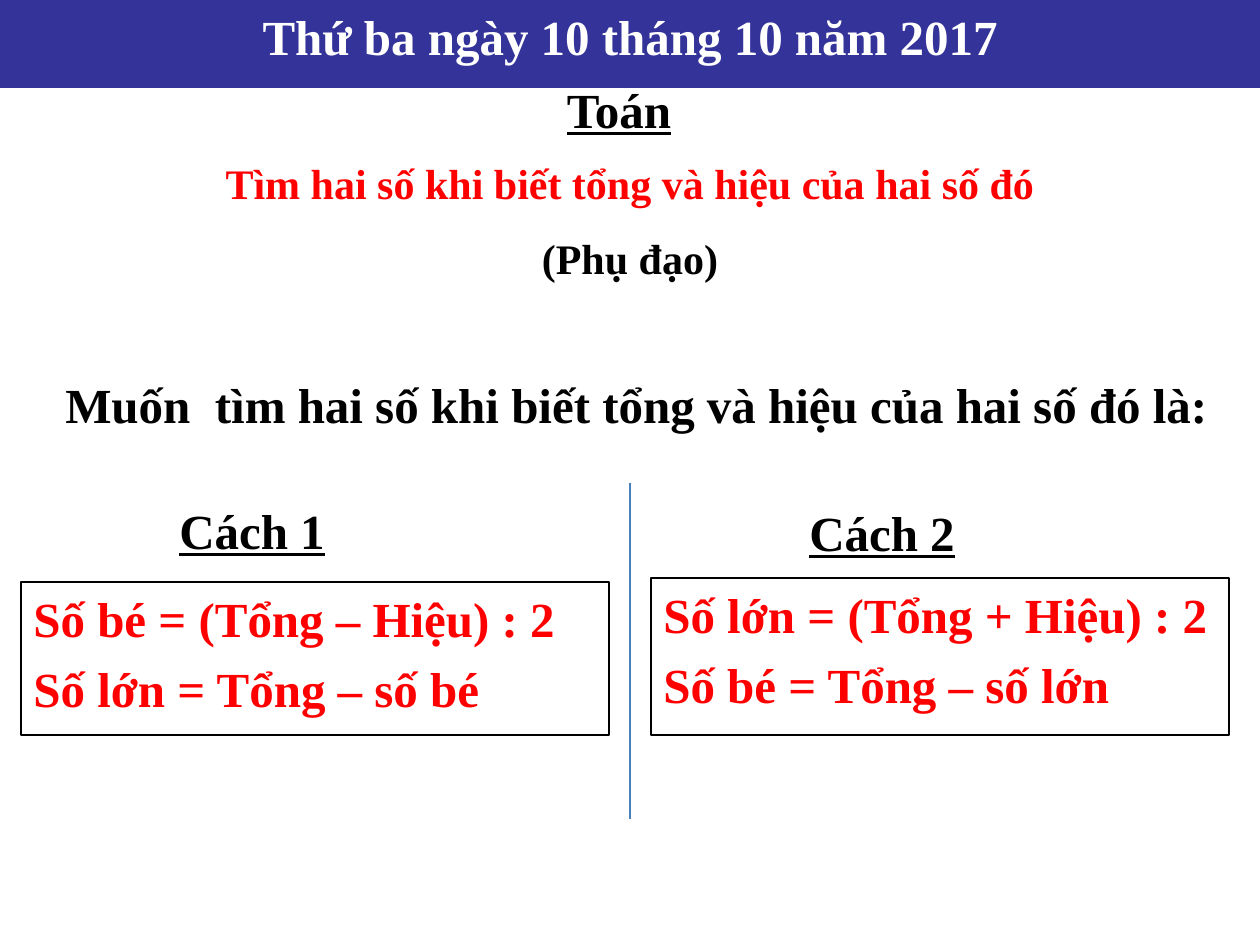
from pptx import Presentation
from pptx.dml.color import RGBColor
from pptx.enum.shapes import MSO_CONNECTOR, MSO_SHAPE
from pptx.enum.text import MSO_ANCHOR, PP_ALIGN
from pptx.oxml.ns import qn
from pptx.util import Pt
from lxml import etree

PX = 914400 // 126
LEFT, CENTER = PP_ALIGN.LEFT, PP_ALIGN.CENTER
TOP = MSO_ANCHOR.TOP
STRAIGHT, RECTANGLE = MSO_CONNECTOR.STRAIGHT, MSO_SHAPE.RECTANGLE
NAVY = RGBColor(0x33, 0x33, 0x99)
WHITE = RGBColor(0xFF, 0xFF, 0xFF)
BLACK = RGBColor(0, 0, 0)
RED = RGBColor(0xFF, 0, 0)
BLUE = RGBColor(0x4B, 0x7E, 0xBC)


def px(*lengths):
    return [length * PX for length in lengths]


def write(box, lines, align=CENTER, size=28, gap=0, margin=0, indent=0, underline=False):
    """Fill box with (text, colour) lines; gap is in points, margin and indent in px."""
    frame = box.text_frame
    frame.word_wrap = True
    frame.vertical_anchor = TOP
    for number, (text, color) in enumerate(lines):
        para = frame.add_paragraph() if number else frame.paragraphs[0]
        para.alignment = align
        para.space_before = Pt(gap if number else 0)
        properties = para._p.get_or_add_pPr()
        properties.set("marL", str(margin * PX))
        properties.set("indent", str(indent * PX))
        span = para.add_run()
        span.text = text
        font_format = {"name": "Times New Roman", "size": Pt(size), "bold": True,
                       "underline": underline}
        for name, value in font_format.items():
            setattr(span.font, name, value)
        span.font.color.rgb = color


deck = Presentation()
deck.slide_width, deck.slide_height = px(1260, 945)
page = deck.slides.add_slide(deck.slide_layouts[5])

# Date banner
title = page.shapes.title
title.left, title.top, title.width, title.height = px(0, 0, 1260, 88)
title.fill.solid()
title.fill.fore_color.rgb = NAVY
write(title, [("Thứ ba ngày 10 tháng 10 năm 2017", WHITE)])

# Subject, lesson and question
subject = page.shapes.add_textbox(*px(388, 73, 462, 72))
write(subject, [("Toán", BLACK)], underline=True)

lesson = page.shapes.add_textbox(*px(126, 151, 1008, 140))
write(lesson, [("Tìm hai số khi biết tổng và hiệu của hai số đó", RED),
               ("(Phụ đạo)", BLACK)], size=24, gap=14)

question = page.shapes.add_textbox(*px(-10, 368, 1260, 72))
write(question, [("Muốn  tìm hai số khi biết tổng và hiệu của hai số đó là:", BLACK)],
      align=LEFT, indent=63)

# Two methods side by side: heading, heading place, formula place, formulas
methods = [
    ("Cách 1", (21, 494, 462, 72), (21, 582, 588, 153),
     ["Số bé = (Tổng – Hiệu) : 2", "Số lớn = Tổng – số bé"]),
    ("Cách 2", (651, 496, 462, 72), (651, 578, 578, 157),
     ["Số lớn = (Tổng + Hiệu) : 2", "Số bé = Tổng – số lớn"]),
]
for name, heading_place, formula_place, formulas in methods:
    heading = page.shapes.add_textbox(*px(*heading_place))
    write(heading, [(name, BLACK)], underline=True)

    box = page.shapes.add_shape(RECTANGLE, *px(*formula_place))
    box.shadow.inherit = False
    box.fill.background()
    box.line.color.rgb = BLACK
    box.line.width = Pt(0.75)
    write(box, [(formula, RED) for formula in formulas], align=LEFT, gap=6.5,
          margin=47, indent=-47)

divider = page.shapes.add_connector(STRAIGHT, *px(630, 483, 630, 819))
divider.line.color.rgb = BLUE
divider.line.width = Pt(0.75)
etree.SubElement(divider._element.spPr, qn("a:effectLst"))

deck.save("out.pptx")
